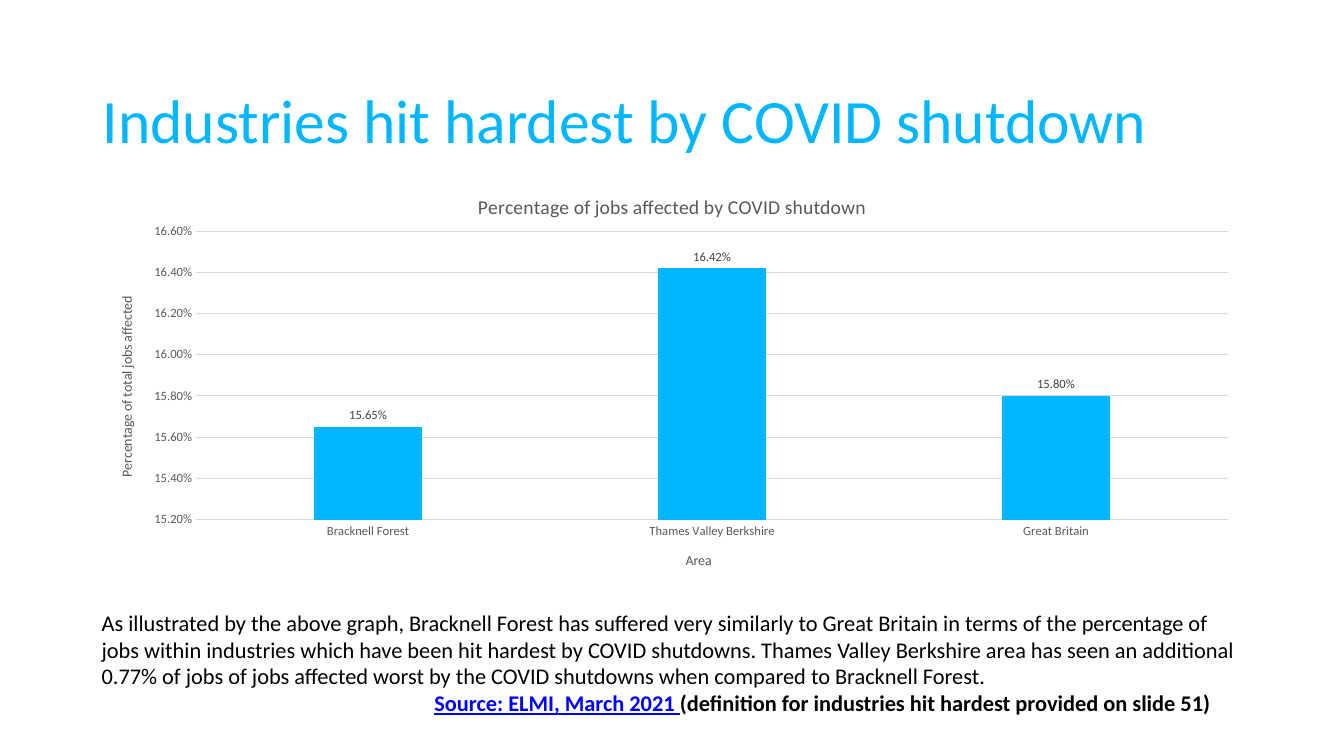
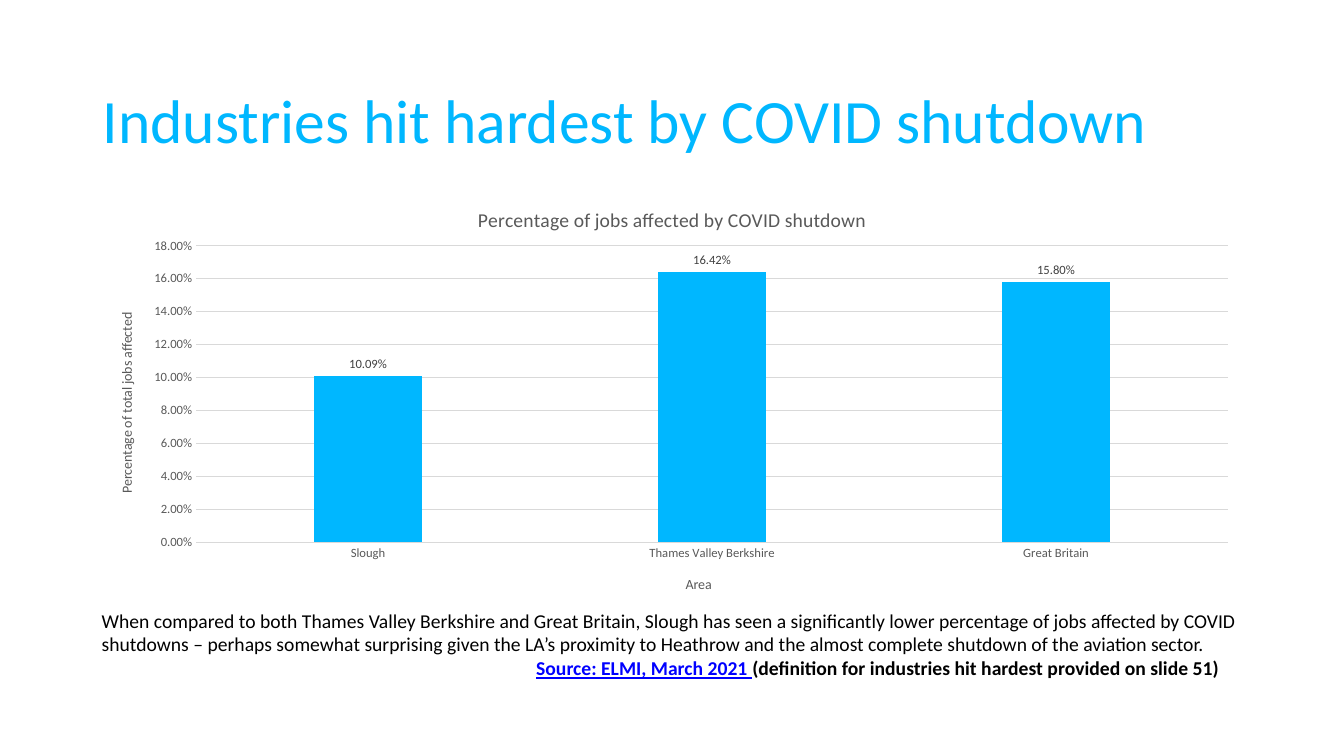
"""Build two slides on the industries hit hardest by COVID shutdowns."""
import pptx
import pptx.chart.data
import pptx.dml.color
import pptx.enum.chart
import pptx.enum.text
import pptx.oxml
import pptx.oxml.ns
import pptx.util
from pptx.util import Inches, Pt

RGBColor = pptx.dml.color.RGBColor
SKY = RGBColor(0x00, 0xB7, 0xFF)
BLACK = RGBColor(0x00, 0x00, 0x00)
LINK = RGBColor(0x00, 0x00, 0xFF)
GREY = RGBColor(0x59, 0x59, 0x59)
LABEL = RGBColor(0x40, 0x40, 0x40)
GRID = RGBColor(0xD9, 0xD9, 0xD9)

FONT = "Calibri"
LEFT, WIDTH = 0.91, 11.5
PERCENT = "0.00%"

SLIDES = [
    {
        "areas": ["Bracknell Forest", "Thames Valley Berkshire", "Great Britain"],
        "shares": [0.1565, 0.1642, 0.158],
        "scale": (0.152, 0.166, 0.002),
        "chart_box": (1.67, 4.15),
        "text": "As illustrated by the above graph, Bracknell Forest has suffered very similarly "
                "to Great Britain in terms of the percentage of jobs within industries which have "
                "been hit hardest by COVID shutdowns. Thames Valley Berkshire area has seen an "
                "additional 0.77% of jobs of jobs affected worst by the COVID shutdowns when "
                "compared to Bracknell Forest.",
        "text_height": 1.18,
        "size": 16,
        "indent": 3.3,
    },
    {
        "areas": ["Slough", "Thames Valley Berkshire", "Great Britain"],
        "shares": [0.1009, 0.1642, 0.158],
        "scale": (0, 0.18, 0.02),
        "chart_box": (1.8, 4.26),
        "text": "When compared to both Thames Valley Berkshire and Great Britain, Slough has seen "
                "a significantly lower percentage of jobs affected by COVID shutdowns – perhaps "
                "somewhat surprising given the LA’s proximity to Heathrow and the almost complete "
                "shutdown of the aviation sector.",
        "text_height": 0.81,
        "size": 14,
        "indent": 4.31,
    },
]


def set_font(font, size, color, bold=False):
    """Apply the shared typeface with a size, colour and weight."""
    font.name, font.size, font.bold = FONT, Pt(size), bold
    font.color.rgb = color


def add_text(s, left, top, width, height):
    """Add a wrapping text box and return its text frame."""
    tf = s.shapes.add_textbox(Inches(left), Inches(top), Inches(width), Inches(height)).text_frame
    tf.word_wrap = True
    return tf


def add_title(s, text):
    """Add the slide title."""
    tf = add_text(s, 0.92, 0.61, WIDTH, 1.24)
    tf.vertical_anchor = pptx.enum.text.MSO_ANCHOR.MIDDLE
    p = tf.paragraphs[0]
    p.text, p.line_spacing = text, 0.9
    set_font(p.font, 44, SKY)


def add_comment(s, text, height, size, indent):
    """Add the commentary with its indented source line."""
    tf = add_text(s, LEFT, 5.99, WIDTH, height)
    p = tf.paragraphs[0]
    p.text = text
    set_font(p.font, size, BLACK)
    p = tf.add_paragraph()
    set_font(p.font, size, BLACK, bold=True)
    p._p.get_or_add_pPr().set("marL", str(Inches(indent)))
    r = p.add_run()
    r.text = "Source: ELMI, March 2021 "
    set_font(r.font, size, LINK, bold=True)
    r.font.underline = True
    r = p.add_run()
    r.text = "(definition for industries hit hardest provided on slide 51)"
    set_font(r.font, size, BLACK, bold=True)


def place(element, **fractions):
    """Position a chart part by fractions of the chart area."""
    qn = pptx.oxml.ns.qn
    for old in element.findall(qn("c:layout")):
        element.remove(old)
    inner = '<c:layoutTarget val="inner"/>' if "w" in fractions else ""
    modes = "".join(f'<c:{k}Mode val="edge"/>' for k in fractions if k in "xy")
    values = "".join(f'<c:{k} val="{v}"/>' for k, v in fractions.items())
    layout = pptx.oxml.parse_xml(
        f'<c:layout {pptx.oxml.ns.nsdecls("c")}><c:manualLayout>{inner}{modes}{values}'
        "</c:manualLayout></c:layout>")
    tx = element.find(qn("c:tx"))
    element.insert(0 if tx is None else 1, layout)


def set_chart_title(title, text, size, x, y):
    """Write and place a chart or axis title."""
    p = title.text_frame.paragraphs[0]
    p.text = text
    set_font(p.font, size, GREY)
    place(title._element, x=x, y=y)


def style_axis(axis, title, x, y):
    """Style an axis and its title."""
    axis.major_tick_mark = axis.minor_tick_mark = pptx.enum.chart.XL_TICK_MARK.NONE
    set_font(axis.tick_labels.font, 9, GREY)
    set_chart_title(axis.axis_title, title, 10, x, y)


def add_column_chart(s, areas, shares, scale, top, height):
    """Add the column chart of job shares by area."""
    data = pptx.chart.data.CategoryChartData(number_format=PERCENT)
    data.categories = areas
    data.add_series("Series 1", shares)
    chart = s.shapes.add_chart(
        pptx.enum.chart.XL_CHART_TYPE.COLUMN_CLUSTERED,
        Inches(LEFT), Inches(top), Inches(WIDTH), Inches(height), data).chart
    set_font(chart.font, 10, BLACK)
    chart.has_legend = False
    set_chart_title(chart.chart_title, "Percentage of jobs affected by COVID shutdown",
                    14, 0.33, 0.05)
    place(chart._chartSpace.chart.plotArea, x=0.09, y=0.15, w=0.89, h=0.69)

    style_axis(chart.category_axis, "Area", 0.51, 0.91)
    line = chart.category_axis.format.line
    line.color.rgb, line.width = GRID, Pt(0.75)

    axis = chart.value_axis
    style_axis(axis, "Percentage of total jobs affected", 0.02, 0.3)
    axis.axis_title.text_frame._txBody.bodyPr.set("rot", "-5400000")
    axis.minimum_scale, axis.maximum_scale, axis.major_unit = scale
    axis.tick_labels.number_format = PERCENT
    axis.tick_labels.number_format_is_linked = False
    axis.format.line.fill.background()
    line = axis.major_gridlines.format.line
    line.color.rgb, line.width = GRID, Pt(0.75)

    plot = chart.plots[0]
    plot.gap_width, plot.overlap, plot.vary_by_categories = 219, -27, False
    fill = plot.series[0].format.fill
    fill.solid()
    fill.fore_color.rgb = SKY
    plot.has_data_labels = True
    labels = plot.data_labels
    labels.show_value = True
    labels.position = pptx.enum.chart.XL_LABEL_POSITION.OUTSIDE_END
    labels.number_format, labels.number_format_is_linked = PERCENT, False
    set_font(labels.font, 9, LABEL)


def main():
    """Build and save the presentation."""
    prs = pptx.Presentation()
    prs.slide_width, prs.slide_height = Inches(13.33), Inches(7.5)
    for content in SLIDES:
        s = prs.slides.add_slide(prs.slide_layouts[6])
        add_title(s, "Industries hit hardest by COVID shutdown")
        add_comment(s, content["text"], content["text_height"], content["size"],
                    content["indent"])
        add_column_chart(s, content["areas"], content["shares"], content["scale"],
                         *content["chart_box"])
    prs.save("out.pptx")


if __name__ == "__main__":
    main()
